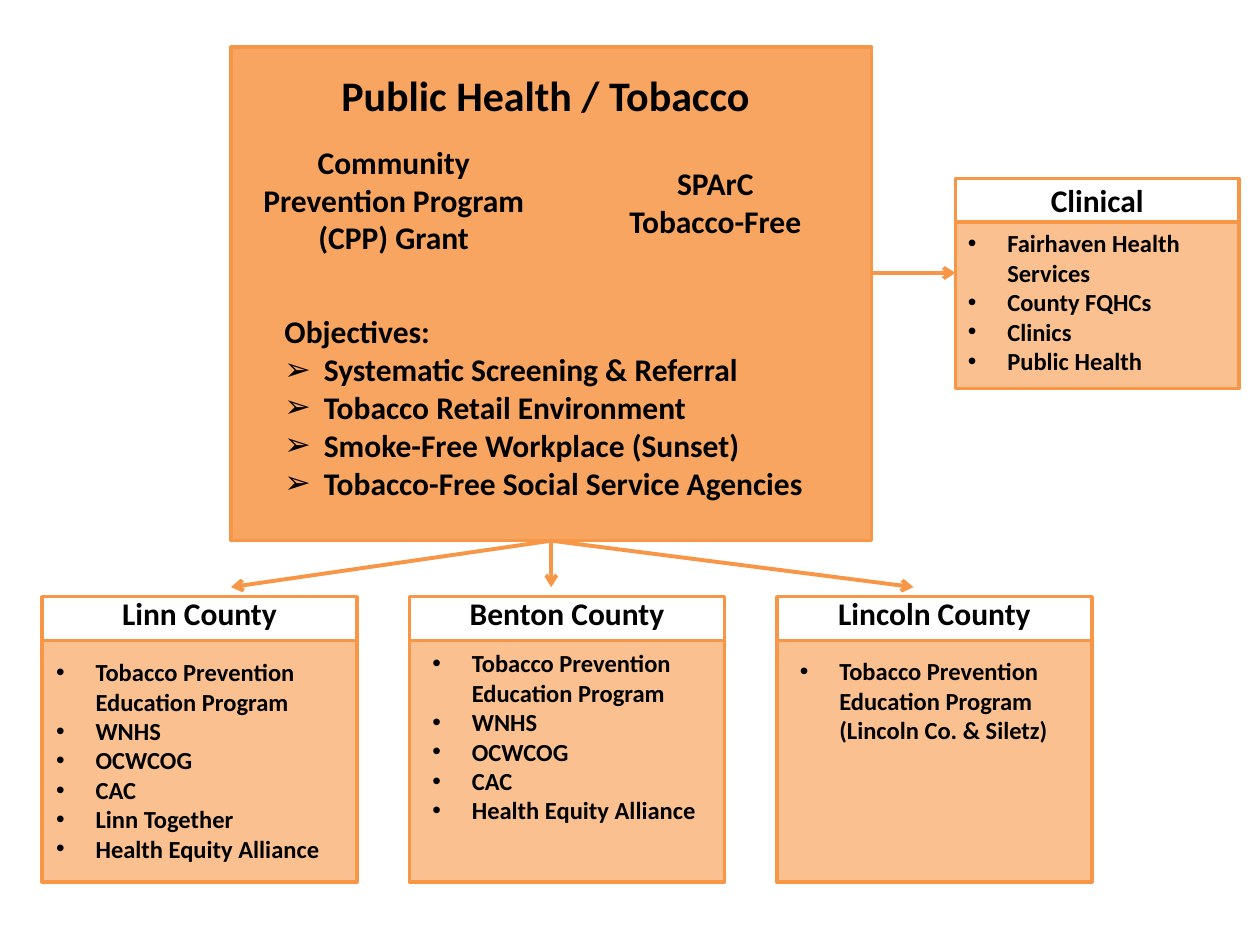
import pptx
import pptx.util
import pptx.dml.color
import pptx.enum.shapes
import pptx.enum.text
import pptx.oxml.ns
import pptx.oxml.xmlchemy

Pt = pptx.util.Pt
qn = pptx.oxml.ns.qn
CENTER = pptx.enum.text.PP_ALIGN.CENTER
LEFT = pptx.enum.text.PP_ALIGN.LEFT

COLORS = {
    "accent": "F79646",
    "panel": "FAC090",
    "header": "FFFFFF",
    "text": "000000",
}
FONT = "Calibri"
INDENT = Pt(22.5)
PROGRAM = "Tobacco Prevention Education Program"
COUNTIES = [
    ("Linn County", 132, (25, 372),
     [PROGRAM, "WNHS", "OCWCOG", "CAC", "Linn Together", "Health Equity Alliance"]),
    ("Benton County", 315, (240, 367),
     [PROGRAM, "WNHS", "OCWCOG", "CAC", "Health Equity Alliance"]),
    ("Lincoln County", 522, (450, 371.5),
     [PROGRAM + " (Lincoln Co. & Siletz)"]),
]
OBJECTIVES = [
    "Systematic Screening & Referral",
    "Tobacco Retail Environment",
    "Smoke-Free Workplace (Sunset)",
    "Tobacco-Free Social Service Agencies",
]
CLINICAL = ["Fairhaven Health Services", "County FQHCs", "Clinics", "Public Health"]


def color(name):
    return pptx.dml.color.RGBColor.from_string(COLORS[name])


def add_child(parent, tag, **attributes):
    child = pptx.oxml.xmlchemy.OxmlElement(tag)
    for key, value in attributes.items():
        child.set(key, str(value))
    parent.append(child)
    return child


def add_box(slide, left, top, width, height, fill, opacity=100):
    box = slide.shapes.add_shape(
        pptx.enum.shapes.MSO_SHAPE.RECTANGLE, Pt(left), Pt(top), Pt(width), Pt(height))
    box.shadow.inherit = False
    box.fill.solid()
    box.fill.fore_color.rgb = color(fill)
    box.line.color.rgb = color("accent")
    box.line.width = Pt(2)
    if opacity < 100:
        tint = box._element.spPr.find(qn("a:solidFill")).find(qn("a:srgbClr"))
        add_child(tint, "a:alpha", val=opacity * 1000)
    return box


def format_text(frame, size, align):
    for paragraph in frame.paragraphs:
        paragraph.alignment = align
        for run in paragraph.runs:
            run.font.name = FONT
            run.font.size = Pt(size)
            run.font.bold = True
            run.font.color.rgb = color("text")


def add_bullet(paragraph, mark):
    properties = paragraph._p.get_or_add_pPr()
    properties.set("marL", str(int(INDENT)))
    properties.set("indent", str(-int(INDENT)))
    add_child(properties, "a:buFont", typeface="Arial")
    add_child(properties, "a:buChar", char=mark)


def add_text(slide, left, top, width, height, lines, size=18, align=CENTER,
             bullet=None, first_bullet=0):
    frame = slide.shapes.add_textbox(Pt(left), Pt(top), Pt(width), Pt(height)).text_frame
    frame.word_wrap = True
    frame.auto_size = pptx.enum.text.MSO_AUTO_SIZE.SHAPE_TO_FIT_TEXT
    frame.text = "\n".join(lines)
    format_text(frame, size, align)
    if bullet:
        for paragraph in frame.paragraphs[first_bullet:]:
            add_bullet(paragraph, bullet)


def add_arrow(slide, start, end):
    arrow = slide.shapes.add_connector(
        pptx.enum.shapes.MSO_CONNECTOR.STRAIGHT, *map(Pt, start + end))
    arrow.line.color.rgb = color("accent")
    arrow.line.width = Pt(2.25)
    properties = arrow._element.spPr
    add_child(properties.find(qn("a:ln")), "a:tailEnd", type="arrow")
    add_child(properties, "a:effectLst")
    return arrow


def add_program(slide):
    program = add_box(slide, 132, 27, 366, 282, "accent", opacity=85)
    add_text(slide, 155.5, 36, 312.5, 36, ["Public Health / Tobacco"], size=24)
    add_text(slide, 135, 78, 180, 73, ["Community Prevention Program (CPP) Grant"])
    add_text(slide, 336, 90, 145.5, 51, ["SPArC", "Tobacco-Free"])
    add_text(slide, 155.5, 175, 318, 117, ["Objectives:"] + OBJECTIVES,
             align=LEFT, bullet="➢", first_bullet=1)
    return program


def add_county(slide, program, column, county):
    name, arrow_end, (list_left, list_top), partners = county
    left = 24 + 210 * column
    add_box(slide, left, 366, 180, 138, "panel")
    add_box(slide, left, 341, 180, 25, "header")
    add_text(slide, left + 6, 336, 168, 29, [name])
    add_text(slide, list_left, list_top, 168, 128, partners, size=14,
             align=LEFT, bullet="•")
    arrow = add_arrow(slide, (315, 309), (arrow_end, 335.5))
    arrow.begin_connect(program, 2)


def add_clinical(slide):
    add_box(slide, 546, 127, 162, 95, "panel")
    header = add_box(slide, 546, 102, 162, 25, "header")
    header.text_frame.text = "Clinical"
    header.text_frame.vertical_anchor = pptx.enum.text.MSO_ANCHOR.MIDDLE
    format_text(header.text_frame, 18, CENTER)
    add_text(slide, 546, 127, 162, 92, CLINICAL, size=14, align=LEFT, bullet="•")
    add_arrow(slide, (498, 156), (546, 156))


def main():
    deck = pptx.Presentation()
    deck.slide_width, deck.slide_height = Pt(720), Pt(540)
    slide = deck.slides.add_slide(deck.slide_layouts[6])
    program = add_program(slide)
    for column, county in enumerate(COUNTIES):
        add_county(slide, program, column, county)
    add_clinical(slide)
    deck.save("out.pptx")


if __name__ == "__main__":
    main()
